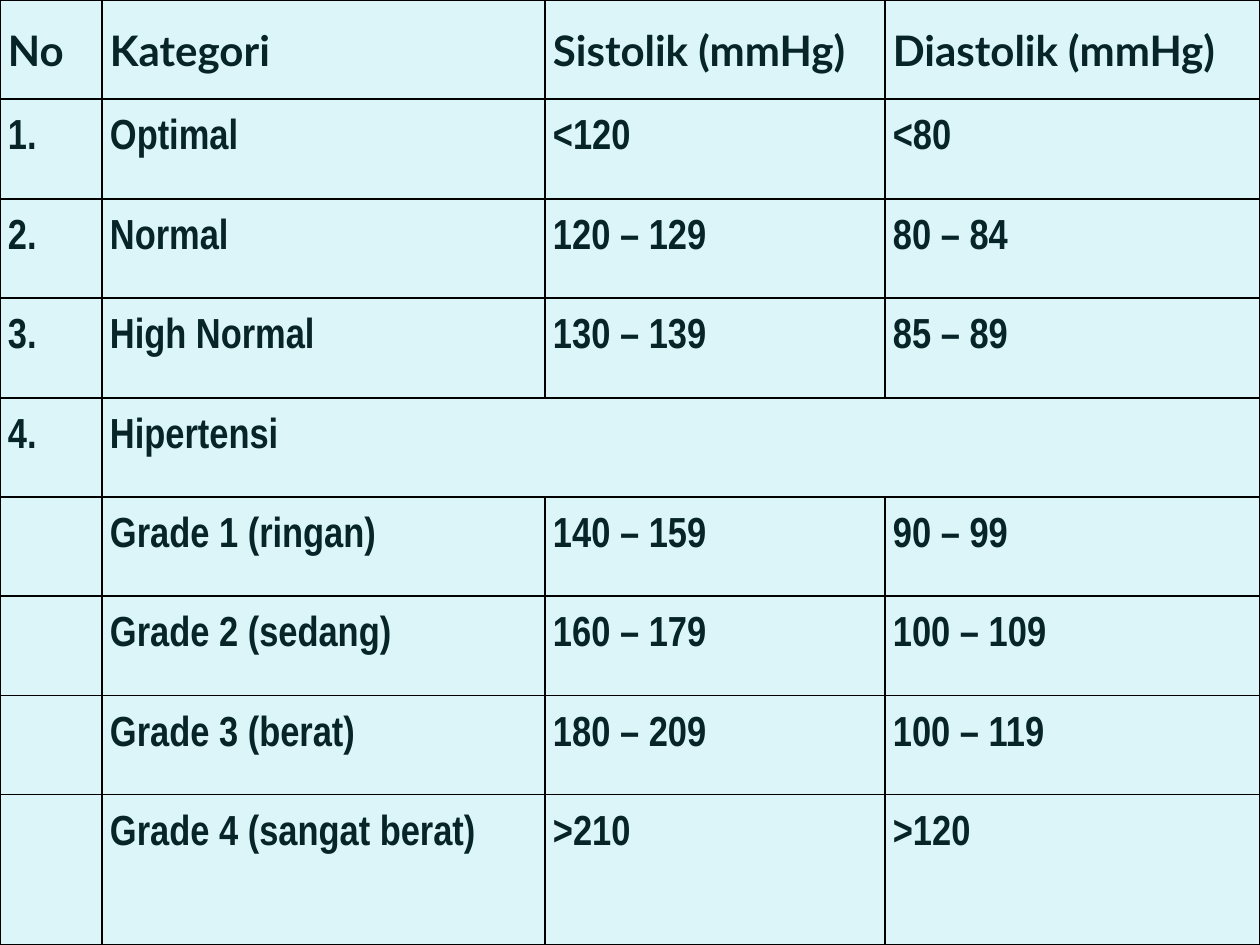
"""Builds the slide with the blood pressure classification table."""
from dataclasses import dataclass

import lxml.etree
import pptx
import pptx.dml.color
import pptx.enum.text
import pptx.oxml.ns
import pptx.table
import pptx.util

PX_PER_INCH = 126
SLIDE_WIDTH, SLIDE_HEIGHT = 1260, 945
COLUMN_WIDTHS = (102, 443, 340, 375)
ROW_PITCH = 99.4
CELL_INSET = 8
BACKGROUND = pptx.dml.color.RGBColor(0xDB, 0xF5, 0xF9)
INK = pptx.dml.color.RGBColor(0x07, 0x24, 0x28)
BORDER = pptx.dml.color.RGBColor(0x00, 0x00, 0x00)
HEADER_FONT, BODY_FONT = "Lato", "Arial Narrow"


@dataclass(frozen=True)
class Category:
    number: str
    name: str
    systolic: str = ""
    diastolic: str = ""

    def texts(self) -> tuple[str, ...]:
        return self.number, self.name, self.systolic, self.diastolic


CATEGORIES = (
    Category("No", "Kategori", "Sistolik (mmHg)", "Diastolik (mmHg)"),
    Category("1.", "Optimal", "<120", "<80"),
    Category("2.", "Normal", "120 – 129", "80 – 84"),
    Category("3.", "High Normal", "130 – 139", "85 – 89"),
    Category("4.", "Hipertensi"),
    Category("", "Grade 1 (ringan)", "140 – 159", "90 – 99"),
    Category("", "Grade 2 (sedang)", "160 – 179", "100 – 109"),
    Category("", "Grade 3 (berat)", "180 – 209", "100 – 119"),
    Category("", "Grade 4 (sangat berat)", ">210", ">120"),
)


def px(length: int) -> pptx.util.Emu:
    return pptx.util.Emu(round(length * pptx.util.Inches(1) / PX_PER_INCH))


def draw_borders(cell: pptx.table._Cell) -> None:
    qn = pptx.oxml.ns.qn
    properties = cell._tc.get_or_add_tcPr()
    for side in ("a:lnL", "a:lnR", "a:lnT", "a:lnB"):
        line = lxml.etree.SubElement(properties, qn(side), w=str(pptx.util.Pt(1)))
        fill = lxml.etree.SubElement(line, qn("a:solidFill"))
        lxml.etree.SubElement(fill, qn("a:srgbClr"), val=str(BORDER))


def write_text(cell: pptx.table._Cell, text: str, font_name: str) -> None:
    paragraph = cell.text_frame.paragraphs[0]
    paragraph.alignment = pptx.enum.text.PP_ALIGN.JUSTIFY
    paragraph.line_spacing = 1.5
    run = paragraph.add_run()
    run.text = text
    run.font.name = font_name
    run.font.size = pptx.util.Pt(24)
    run.font.bold = True
    run.font.color.rgb = INK


def draw_cell(cell: pptx.table._Cell, text: str, font_name: str) -> None:
    cell.margin_left = cell.margin_right = px(CELL_INSET)
    cell.margin_top = cell.margin_bottom = 0
    draw_borders(cell)
    cell.fill.background()
    if text:
        write_text(cell, text, font_name)


def draw_table(slide: pptx.slide.Slide) -> None:
    table = slide.shapes.add_table(
        len(CATEGORIES), len(COLUMN_WIDTHS), 0, 0, px(SLIDE_WIDTH), px(SLIDE_HEIGHT)
    ).table
    table.first_row = table.horz_banding = False
    for column, width in zip(table.columns, COLUMN_WIDTHS):
        column.width = px(width)
    row_edges = [round(ROW_PITCH * index) for index in range(len(CATEGORIES))]
    row_edges.append(SLIDE_HEIGHT)
    for index, category in enumerate(CATEGORIES):
        table.rows[index].height = px(row_edges[index + 1] - row_edges[index])
        if not category.systolic:
            table.cell(index, 1).merge(table.cell(index, 3))
        font_name = BODY_FONT if index else HEADER_FONT
        for cell, text in zip(table.rows[index].cells, category.texts()):
            draw_cell(cell, text, font_name)


def main() -> None:
    presentation = pptx.Presentation()
    presentation.slide_width = px(SLIDE_WIDTH)
    presentation.slide_height = px(SLIDE_HEIGHT)
    slide = presentation.slides.add_slide(presentation.slide_layouts[6])
    slide.background.fill.solid()
    slide.background.fill.fore_color.rgb = BACKGROUND
    draw_table(slide)
    presentation.save("out.pptx")


if __name__ == "__main__":
    main()
